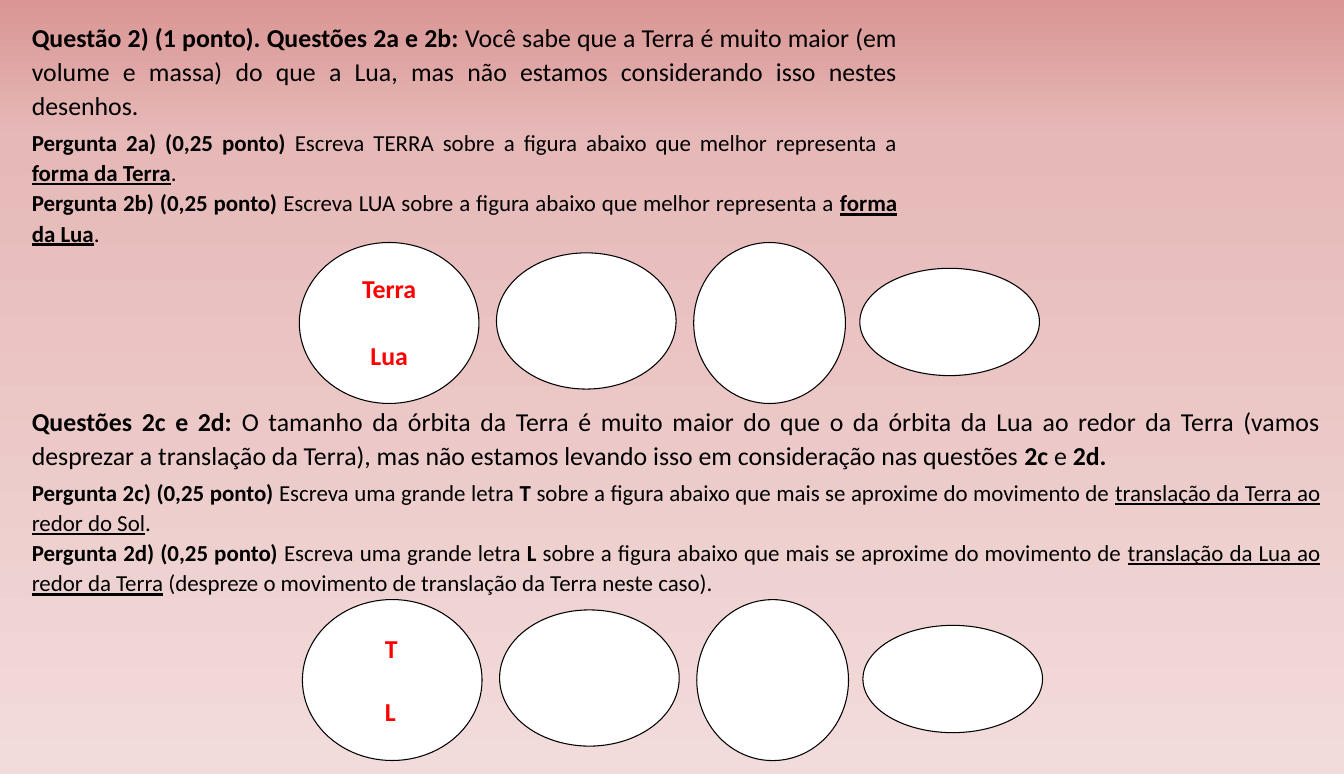
import copy
from dataclasses import dataclass

import pptx
import pptx.dml.color
import pptx.enum.shapes
import pptx.enum.text
import pptx.oxml.ns
import pptx.util

RGBColor = pptx.dml.color.RGBColor
Inches = pptx.util.Inches
Pt = pptx.util.Pt

BLACK = RGBColor(0x00, 0x00, 0x00)
WHITE = RGBColor(0xFF, 0xFF, 0xFF)
RED = RGBColor(0xFF, 0x00, 0x00)
ROSE_DARK = RGBColor(0xD9, 0x96, 0x94)
ROSE_MID = RGBColor(0xE6, 0xB9, 0xB8)
ROSE_LIGHT = RGBColor(0xF2, 0xDC, 0xDB)
BACKGROUND = [(0, ROSE_DARK), (0.18, ROSE_MID), (1, ROSE_LIGHT)]
FONT = "Calibri"
MARGIN = 0.21


@dataclass
class Span:
    text: str
    bold: bool = False
    underline: bool = False


@dataclass
class Passage:
    top: float
    width: float
    height: float
    size: int
    paragraphs: list[list[Span]]


@dataclass
class Ellipse:
    """An ellipse placed relative to the corner of its row."""
    dx: float
    dy: float
    width: float
    height: float
    rotation: int = 0


@dataclass
class Answer:
    text: str
    left: float
    top: float
    width: float


PASSAGES = [
    Passage(0.13, 8.58, 1.1, 18, [[
        Span("Questão 2) (1 ponto). Questões 2a e 2b: ", bold=True),
        Span("Você sabe que a Terra é muito maior (em volume e massa) do que a Lua, "
             "mas não estamos considerando isso nestes desenhos."),
    ]]),
    Passage(1.17, 8.58, 1.29, 16, [
        [
            Span("Pergunta 2a) (0,25 ponto) ", bold=True),
            Span("Escreva TERRA sobre a figura abaixo que melhor representa a "),
            Span("forma da Terra", bold=True, underline=True),
            Span("."),
        ],
        [
            Span("Pergunta 2b) (0,25 ponto) ", bold=True),
            Span("Escreva LUA sobre a figura abaixo que melhor representa a "),
            Span("forma da Lua", bold=True, underline=True),
            Span("."),
        ],
    ]),
    Passage(3.85, 12.68, 0.77, 18, [[
        Span("Questões 2c e 2d: ", bold=True),
        Span("O tamanho da órbita da Terra é muito maior do que o da órbita da Lua ao redor "
             "da Terra (vamos desprezar a translação da Terra), mas não estamos levando isso "
             "em consideração nas questões "),
        Span("2c", bold=True),
        Span(" e "),
        Span("2d.", bold=True),
    ]]),
    Passage(4.56, 12.68, 1.29, 16, [
        [
            Span("Pergunta 2c) (0,25 ponto) ", bold=True),
            Span("Escreva uma grande letra "),
            Span("T", bold=True),
            Span(" sobre a figura abaixo que mais se aproxime do movimento de "),
            Span("translação da Terra ao redor do Sol", underline=True),
            Span("."),
        ],
        [
            Span("Pergunta 2d) (0,25 ponto) ", bold=True),
            Span("Escreva uma grande letra "),
            Span("L", bold=True),
            Span(" sobre a figura abaixo que mais se aproxime do movimento de "),
            Span("translação da Lua ao redor da Terra", underline=True),
            Span(" (despreze o movimento de translação da Terra neste caso)."),
        ],
    ]),
]

ELLIPSES = [
    Ellipse(1.91, 0.1, 1.74, 1.32),
    Ellipse(0, 0, 1.74, 1.56),
    Ellipse(5.43, 0.25, 1.74, 1.04),
    Ellipse(3.82, 0, 1.47, 1.56, rotation=180),
]
ROW_CORNERS = [(2.9, 2.35), (2.93, 5.81)]

ANSWERS = [
    Answer("Terra", 3.41, 2.59, 0.73),
    Answer("Lua", 3.49, 3.24, 0.56),
    Answer("T", 3.63, 6.08, 0.33),
    Answer("L", 3.63, 6.69, 0.31),
]


def paint_background(s: pptx.slide.Slide) -> None:
    fill = s.background.fill
    fill.gradient()
    fill.gradient_angle = 270
    stops = s.element.find(".//" + pptx.oxml.ns.qn("a:gsLst"))
    stops.append(copy.deepcopy(stops[-1]))
    for stop, (position, color) in zip(fill.gradient_stops, BACKGROUND):
        stop.position = position
        stop.color.rgb = color


def add_run(p, text: str, *, size: int, color: RGBColor = BLACK,
            bold: bool = False, underline: bool = False) -> None:
    r = p.add_run()
    r.text = text
    r.font.name = FONT
    r.font.size = Pt(size)
    r.font.color.rgb = color
    r.font.bold = bold
    r.font.underline = underline


def add_text_frame(s: pptx.slide.Slide, left: float, top: float, width: float,
                   height: float, *, wrap: bool):
    tf = s.shapes.add_textbox(*map(Inches, (left, top, width, height))).text_frame
    tf.word_wrap = wrap
    tf.auto_size = pptx.enum.text.MSO_AUTO_SIZE.SHAPE_TO_FIT_TEXT
    return tf


def add_passage(s: pptx.slide.Slide, passage: Passage) -> None:
    tf = add_text_frame(s, MARGIN, passage.top, passage.width, passage.height, wrap=True)
    for i, spans in enumerate(passage.paragraphs):
        p = tf.add_paragraph() if i else tf.paragraphs[0]
        p.alignment = pptx.enum.text.PP_ALIGN.JUSTIFY
        p.line_spacing = 1.1
        for span in spans:
            add_run(p, span.text, size=passage.size, bold=span.bold, underline=span.underline)


def add_ellipse_row(s: pptx.slide.Slide, left: float, top: float) -> None:
    group = s.shapes.add_group_shape()
    for e in ELLIPSES:
        sp = group.shapes.add_shape(
            pptx.enum.shapes.MSO_SHAPE.OVAL,
            *map(Inches, (left + e.dx, top + e.dy, e.width, e.height)))
        sp.rotation = e.rotation
        sp.shadow.inherit = False
        sp.fill.solid()
        sp.fill.fore_color.rgb = WHITE
        sp.line.color.rgb = BLACK
        sp.line.width = Pt(0.75)


def add_answer(s: pptx.slide.Slide, answer: Answer) -> None:
    tf = add_text_frame(s, answer.left, answer.top, answer.width, 0.4, wrap=False)
    add_run(tf.paragraphs[0], answer.text, size=18, color=RED, bold=True)


def main() -> None:
    prs = pptx.Presentation()
    prs.slide_width, prs.slide_height = Inches(13.02), Inches(7.5)
    s = prs.slides.add_slide(prs.slide_layouts[6])
    paint_background(s)
    for passage in PASSAGES:
        add_passage(s, passage)
    for left, top in ROW_CORNERS:
        add_ellipse_row(s, left, top)
    for answer in ANSWERS:
        add_answer(s, answer)
    prs.save("out.pptx")


if __name__ == "__main__":
    main()
